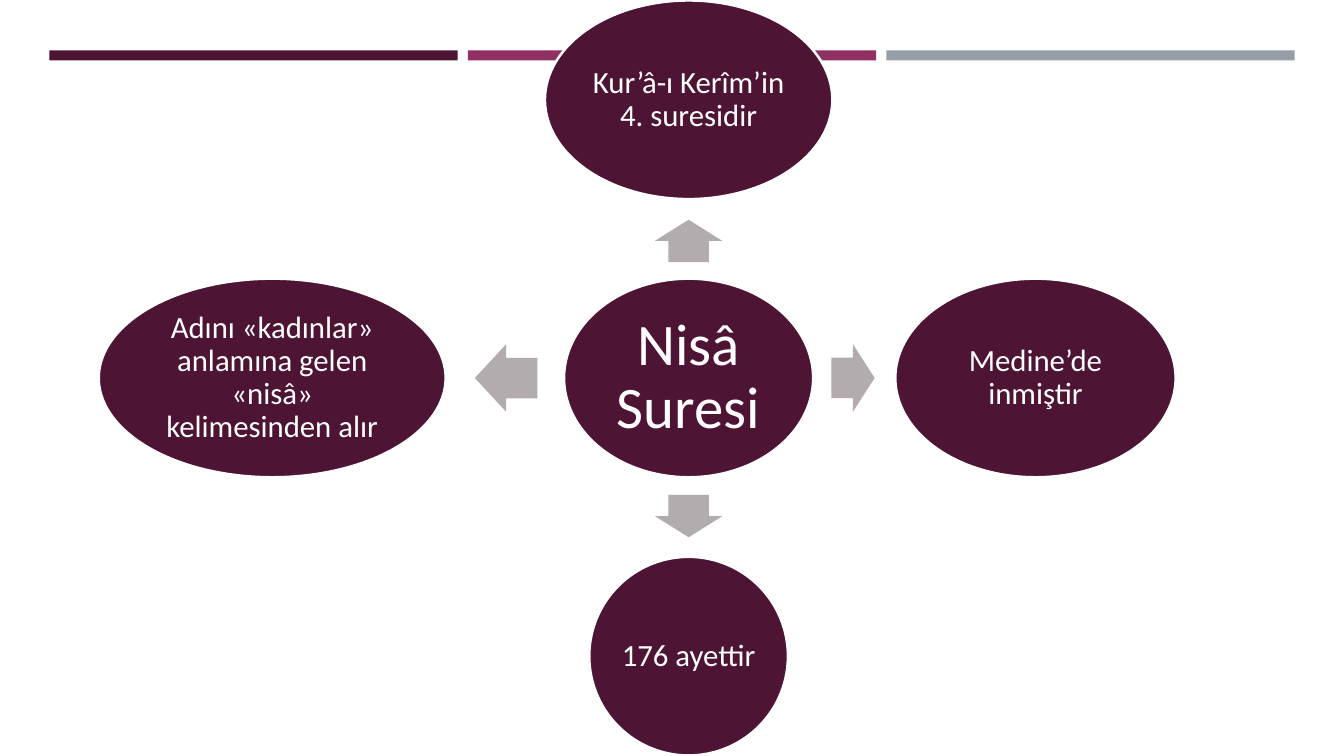
"""Builds a slide with a radial diagram of facts about Nisâ Suresi."""
from math import cos, radians, sin

from pptx import Presentation
from pptx.dml.color import RGBColor
from pptx.enum.shapes import MSO_SHAPE
from pptx.enum.text import MSO_ANCHOR, PP_ALIGN
from pptx.util import Inches, Pt

RECTANGLE = MSO_SHAPE.RECTANGLE
OVAL = MSO_SHAPE.OVAL
ARROW = MSO_SHAPE.RIGHT_ARROW
CENTER = PP_ALIGN.CENTER
MIDDLE = MSO_ANCHOR.MIDDLE

TOPIC = "Nisâ Suresi"
FACTS = [
    {"text": "Kur’â-ı Kerîm’in 4. suresidir", "angle": 270, "width": 2.85,
     "distance": 2.76, "arrow_length": 0.42, "arrow_distance": 1.36},
    {"text": "Medine’de inmiştir", "angle": 0, "width": 2.78,
     "distance": 3.44, "arrow_length": 0.43, "arrow_distance": 1.63},
    {"text": "176 ayettir", "angle": 90, "width": 1.97,
     "distance": 2.76, "arrow_length": 0.42, "arrow_distance": 1.37},
    {"text": "Adını «kadınlar» anlamına gelen «nisâ» kelimesinden alır",
     "angle": 180, "width": 3.44,
     "distance": 4.13, "arrow_length": 0.62, "arrow_distance": 1.81},
]

THEME = {
    "font": "Calibri",
    "topic_size": 42,
    "fact_size": 22,
    "bars": ["4D1434", "903163", "969FA7"],
    "bubble": "4D1434",
    "arrow": "B2ACAE",
    "light": "FFFFFF",
}

BAR_LEFT, BAR_TOP, BAR_WIDTH, BAR_HEIGHT, BAR_PITCH = 0.49, 0.5, 4.05, 0.1, 4.15
HUB_X, HUB_Y = 6.83, 3.75
TOPIC_WIDTH, BUBBLE_HEIGHT, ARROW_HEIGHT = 2.47, 1.97, 0.67

prs = Presentation()
prs.slide_width, prs.slide_height = Inches(13.33), Inches(7.5)
slide = prs.slides.add_slide(prs.slide_layouts[6])


def add_filled(kind, center_x, center_y, width, height, color):
    shape = slide.shapes.add_shape(
        kind, Inches(center_x - width / 2), Inches(center_y - height / 2),
        Inches(width), Inches(height))
    shape.shadow.inherit = False
    shape.fill.solid()
    shape.fill.fore_color.rgb = RGBColor.from_string(color)
    shape.line.fill.background()
    return shape


def write(shape, text, *, size, inset, color=THEME["light"]):
    frame = shape.text_frame
    frame.word_wrap = True
    frame.vertical_anchor = MIDDLE
    frame.margin_left = frame.margin_right = Inches(inset)
    frame.margin_top = frame.margin_bottom = Inches(inset)
    paragraph = frame.paragraphs[0]
    paragraph.alignment = CENTER
    paragraph.line_spacing = 0.9
    run = paragraph.add_run()
    run.text = text
    run.font.name = THEME["font"]
    run.font.size = Pt(size)
    run.font.color.rgb = RGBColor.from_string(color)


def add_bubble(text, center_x, center_y, width, size, inset):
    bubble = add_filled(OVAL, center_x, center_y, width, BUBBLE_HEIGHT,
                        THEME["bubble"])
    bubble.line.color.rgb = RGBColor.from_string(THEME["light"])
    bubble.line.width = Pt(1.75)
    write(bubble, text, size=size, inset=inset)


def from_hub(angle, distance):
    turn = radians(angle)
    return HUB_X + distance * cos(turn), HUB_Y + distance * sin(turn)


for column, color in enumerate(THEME["bars"]):
    add_filled(RECTANGLE, BAR_LEFT + column * BAR_PITCH + BAR_WIDTH / 2,
               BAR_TOP + BAR_HEIGHT / 2, BAR_WIDTH, BAR_HEIGHT, color)

add_bubble(TOPIC, HUB_X, HUB_Y, TOPIC_WIDTH, THEME["topic_size"], 0.06)

for fact in FACTS:
    arrow = add_filled(ARROW, *from_hub(fact["angle"], fact["arrow_distance"]),
                       fact["arrow_length"], ARROW_HEIGHT, THEME["arrow"])
    arrow.adjustments[0] = 0.6
    arrow.adjustments[1] = 0.5
    arrow.rotation = fact["angle"]
    add_bubble(fact["text"], *from_hub(fact["angle"], fact["distance"]),
               fact["width"], THEME["fact_size"], 0.03)

prs.save("out.pptx")
